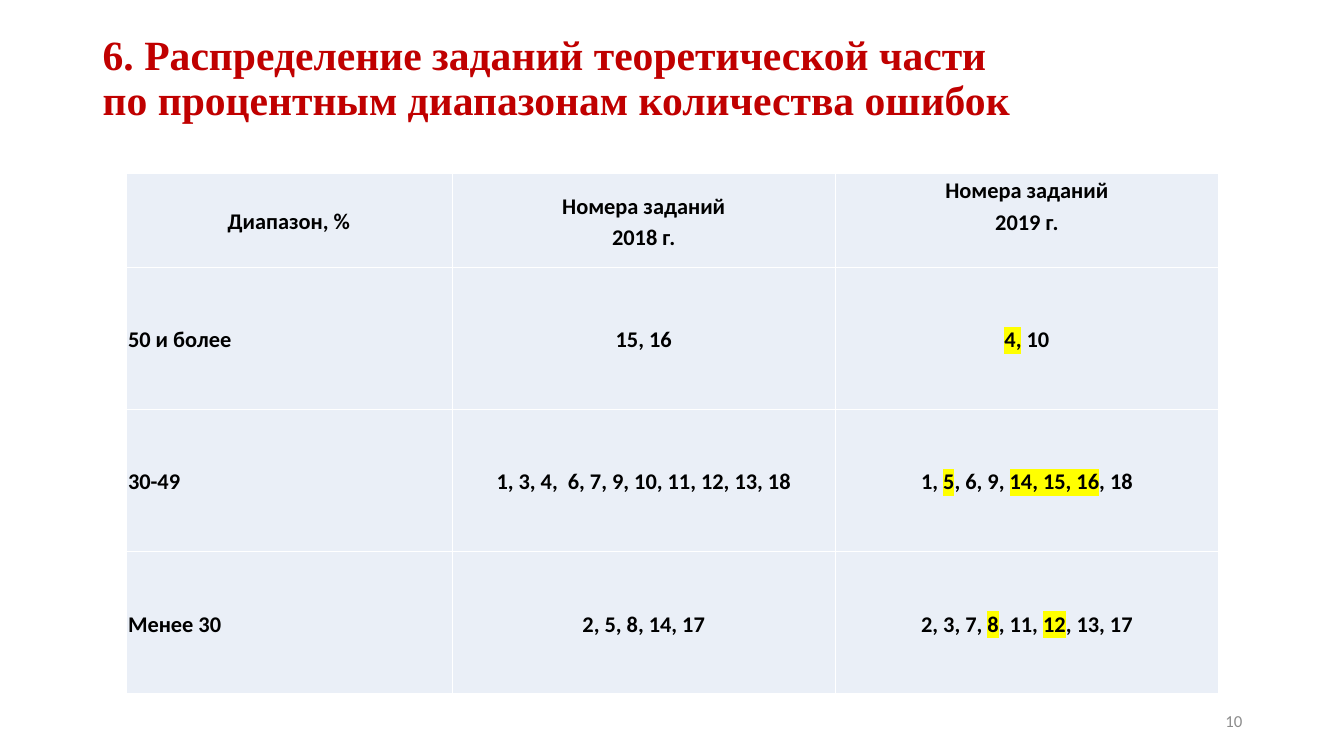
from lxml.etree import SubElement as Sub
from pptx import Presentation
from pptx.dml.color import RGBColor as RGB
from pptx.enum.text import MSO_ANCHOR as Anchor, PP_ALIGN as Align
from pptx.oxml.ns import qn
from pptx.util import Emu, Pt


def px(n):
    return Emu(n * 9144)


def tint(code):
    return RGB.from_string(code)


def solid(node, tag, code):
    box = Sub(node, qn(tag))
    Sub(box, qn("a:srgbClr"), val=code)


def write(frame, text, size=16, face="Calibri", ink="000000", bold=False,
          align=Align.LEFT, lead=1.0):
    for i, line in enumerate(text.split("\n")):
        para = frame.paragraphs[0] if i == 0 else frame.add_paragraph()
        para.alignment = align
        para.line_spacing = lead
        for j, part in enumerate(line.split("|")):
            if not part:
                continue
            for k, piece in enumerate(part.split("\v")):
                if k:
                    para.add_line_break()
                run = para.add_run()
                run.text = piece
                font = run.font
                font.size, font.bold = Pt(size), bold
                font.color.rgb = tint(ink)
                if j % 2:
                    solid(run._r.get_or_add_rPr(), "a:highlight", "FFFF00")
                font.name = face


class Deck:
    head, pale, line, gray = "C00000", "EAEFF7", "FFFFFF", "8C8C8C"

    def __init__(self):
        self.file = Presentation()
        self.file.slide_width, self.file.slide_height = px(1333), px(750)
        self.page = self.file.slides.add_slide(self.file.slide_layouts[6])

    def label(self, x, y, w, h, text, **style):
        box = self.page.shapes.add_textbox(px(x), px(y), px(w), px(h))
        frame = box.text_frame
        frame.word_wrap = True
        frame.vertical_anchor = Anchor.MIDDLE
        write(frame, text, **style)

    def table(self, x, y, cols, rows, data):
        grid = self.page.shapes.add_table(
            len(rows), len(cols), px(x), px(y), px(sum(cols)), px(sum(rows))
        ).table
        grid.first_row = grid.horz_banding = False
        for col, w in zip(grid.columns, cols):
            col.width = px(w)
        for row, h in zip(grid.rows, rows):
            row.height = px(h)
        for r, texts in enumerate(data):
            for c, text in enumerate(texts):
                left = r > 0 and c == 0
                top = r == 0 and c == 2
                self.cell(grid.cell(r, c), text,
                          Align.LEFT if left else Align.CENTER,
                          Anchor.TOP if top else Anchor.MIDDLE)

    def cell(self, cell, text, align, anchor):
        cell.margin_left, cell.margin_right = px(2), px(3)
        cell.margin_top = cell.margin_bottom = 0
        cell.vertical_anchor = anchor
        prop = cell._tc.get_or_add_tcPr()
        for side in "LRTB":
            edge = Sub(prop, qn("a:ln" + side), w=str(Pt(1)))
            solid(edge, "a:solidFill", self.line)
        cell.fill.solid()
        cell.fill.fore_color.rgb = tint(self.pale)
        write(cell.text_frame, text, bold=True, align=align, lead=1.15)


def main():
    deck = Deck()
    deck.label(92, 24, 1150, 110,
               "6. Распределение заданий теоретической части\v"
               "по процентным диапазонам количества ошибок",
               size=29.7, face="Times New Roman", ink=deck.head,
               bold=True, lead=0.9)
    deck.table(125, 172, [324, 380, 380], [93] + [141] * 3, [
        ["Диапазон, %", "Номера заданий\n2018 г.", "Номера заданий\n2019 г."],
        ["50 и более", "15, 16", "|4,| 10"],
        ["30-49", "1, 3, 4,  6, 7, 9, 10, 11, 12, 13, 18",
         "1, |5|, 6, 9, |14, 15, 16|, 18"],
        ["Менее 30", "2, 5, 8, 14, 17", "2, 3, 7, |8|, 11, |12|, 13, 17"],
    ])
    deck.label(942, 695, 300, 40, "10", size=12, ink=deck.gray,
               align=Align.RIGHT)
    deck.file.save("out.pptx")


if __name__ == "__main__":
    main()
